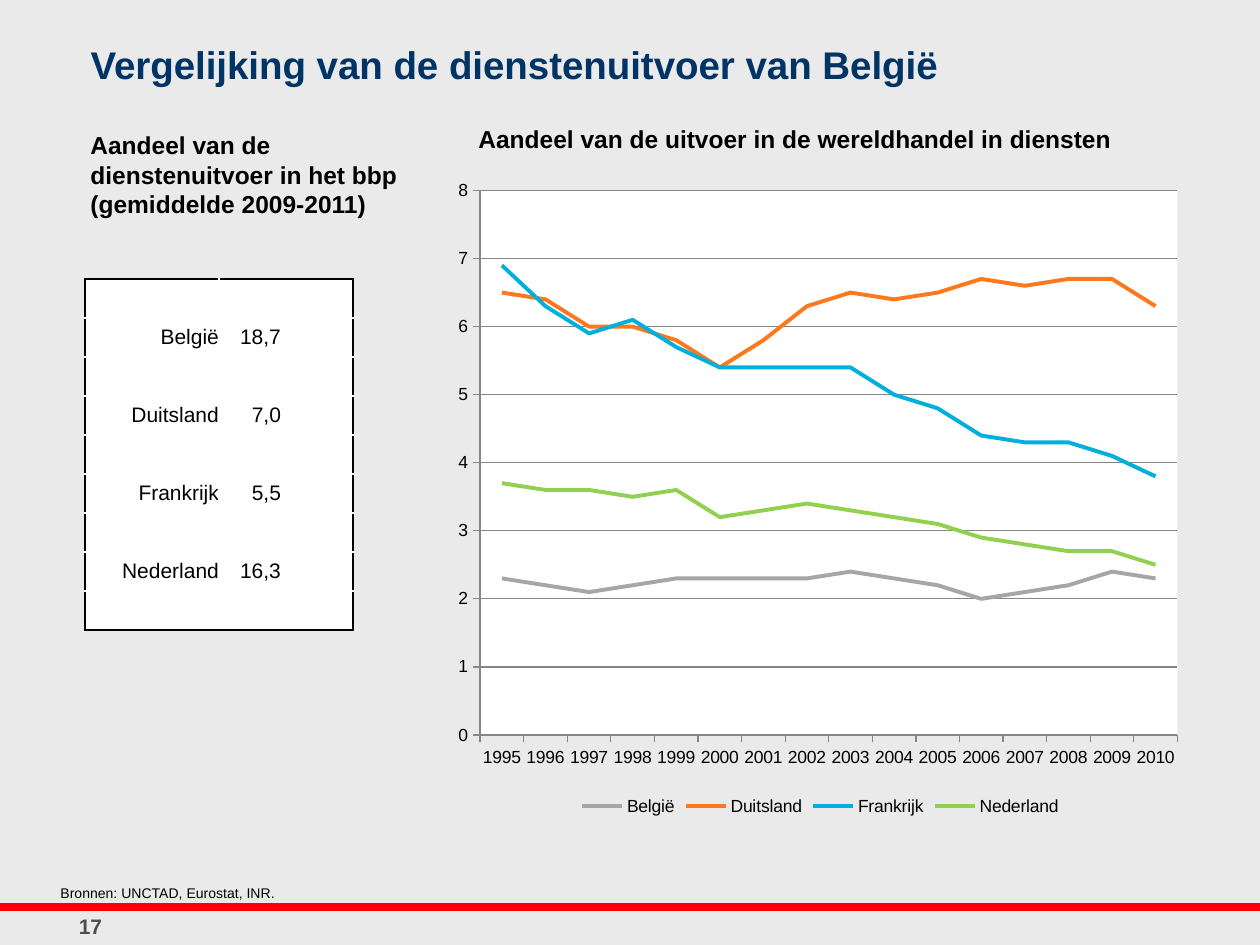
from dataclasses import dataclass

from lxml.etree import SubElement
from pptx import Presentation
from pptx.chart.data import CategoryChartData
from pptx.dml.color import RGBColor
from pptx.enum.chart import XL_CHART_TYPE as ChartType
from pptx.enum.chart import XL_LEGEND_POSITION as LegendPosition
from pptx.enum.chart import XL_TICK_MARK as TickMark
from pptx.enum.shapes import MSO_CONNECTOR as Connector
from pptx.enum.text import MSO_ANCHOR as Anchor
from pptx.enum.text import PP_ALIGN as Align
from pptx.oxml import parse_xml
from pptx.oxml.ns import nsdecls, qn
from pptx.util import Emu, Pt

FONT = "Arial"
COLORS = {
    "background": "EAEAEA", "title": "003366", "text": "000000",
    "number": "4D4D4D", "rule": "FF0000", "white": "FFFFFF", "grid": "868686",
    "België": "A6A6A6", "Duitsland": "FF781D",
    "Frankrijk": "00B0DC", "Nederland": "92D050",
}


@dataclass
class Box:
    left: int
    top: int
    width: int
    height: int

    def emu(self) -> tuple:
        return px(self.left), px(self.top), px(self.width), px(self.height)


@dataclass
class Label:
    text: str
    box: Box
    size: int
    bold: bool = True
    color: str = "text"
    align: Align = Align.LEFT
    anchor: Anchor = Anchor.TOP


@dataclass
class Country:
    name: str
    gdp_share: str
    trade_shares: tuple


LABELS = [
    Label("17", Box(35, 908, 111, 37), 12, color="number",
          align=Align.CENTER, anchor=Anchor.MIDDLE),
    Label("Bronnen: UNCTAD, Eurostat, INR.", Box(48, 878, 990, 29), 8, bold=False),
    Label("Aandeel van de uitvoer in de wereldhandel in diensten",
          Box(466, 118, 692, 43), 14),
    Label("Aandeel van de dienstenuitvoer in het bbp (gemiddelde 2009-2011)",
          Box(78, 124, 333, 102), 14),
]
COUNTRIES = [
    Country("België", "18,7", (2.3, 2.2, 2.1, 2.2, 2.3, 2.3, 2.3, 2.3,
                               2.4, 2.3, 2.2, 2, 2.1, 2.2, 2.4, 2.3)),
    Country("Duitsland", "7,0", (6.5, 6.4, 6, 6, 5.8, 5.4, 5.8, 6.3,
                                 6.5, 6.4, 6.5, 6.7, 6.6, 6.7, 6.7, 6.3)),
    Country("Frankrijk", "5,5", (6.9, 6.3, 5.9, 6.1, 5.7, 5.4, 5.4, 5.4,
                                 5.4, 5, 4.8, 4.4, 4.3, 4.3, 4.1, 3.8)),
    Country("Nederland", "16,3", (3.7, 3.6, 3.6, 3.5, 3.6, 3.2, 3.3, 3.4,
                                  3.3, 3.2, 3.1, 2.9, 2.8, 2.7, 2.7, 2.5)),
]


def px(value: int) -> Emu:
    return Emu(round(value * 914400 / 126))


def rgb(name: str) -> RGBColor:
    return RGBColor.from_string(COLORS[name])


def add_run(paragraph, text: str, size: int, bold: bool = False, color: str = "text") -> None:
    run = paragraph.add_run()
    run.text = text
    run.font.name, run.font.size, run.font.bold = FONT, Pt(size), bold
    run.font.color.rgb = rgb(color)


def write_label(shape, label: Label) -> None:
    shape.left, shape.top, shape.width, shape.height = label.box.emu()
    frame = shape.text_frame
    frame.word_wrap, frame.vertical_anchor = True, label.anchor
    paragraph = frame.paragraphs[0]
    paragraph.alignment = label.align
    add_run(paragraph, label.text, label.size, label.bold, label.color)


def add_rule(slide) -> None:
    rule = slide.shapes.add_connector(Connector.STRAIGHT, 0, px(907), px(1260), px(907))
    rule.line.color.rgb, rule.line.width = rgb("rule"), Pt(4.5)
    SubElement(rule._element.spPr, qn("a:effectLst"))


def add_border(cell, sides: str) -> None:
    """Draw the sides, given in the order L, R, T, B, before the cell's fill."""
    for index, side in enumerate(sides):
        cell._tc.get_or_add_tcPr().insert(index, parse_xml(
            f'<a:ln{side} {nsdecls("a")} w="12700"><a:solidFill>'
            f'<a:srgbClr val="{COLORS["text"]}"/></a:solidFill></a:ln{side}>'))


def add_share_table(slide, box: Box) -> None:
    row_count = 2 * len(COUNTRIES) + 1
    table = slide.shapes.add_table(row_count, 2, *box.emu()).table
    table.first_row = table.horz_banding = False
    for row in range(row_count):
        table.rows[row].height = px(box.height // row_count)
        edge = {0: "T", row_count - 1: "B"}.get(row, "")
        for column, side in enumerate("LR"):
            cell = table.cell(row, column)
            cell.margin_left = cell.margin_right = cell.margin_top = cell.margin_bottom = 0
            cell.vertical_anchor = Anchor.MIDDLE
            cell.fill.solid()
            cell.fill.fore_color.rgb = rgb("white")
            add_border(cell, side + edge)
    # Countries fill every second row
    for index, country in enumerate(COUNTRIES):
        name, share = (table.cell(2 * index + 1, column).text_frame.paragraphs[0]
                       for column in range(2))
        name.alignment = Align.RIGHT
        add_run(name, country.name, 12)
        tabs = SubElement(share._p.get_or_add_pPr(), qn("a:tabLst"))
        SubElement(tabs, qn("a:tab"), pos=str(px(62)), algn="dec")
        add_run(share, "\t" + country.gdp_share, 12)


def format_plot_area(chart) -> None:
    plot_area = chart._chartSpace.chart.plotArea
    for layout in plot_area.findall(qn("c:layout")):
        plot_area.remove(layout)
    sizes = {"x": 0.048, "y": 0.024, "w": 0.926, "h": 0.843}
    modes = "".join(f'<c:{key}Mode val="edge"/>' for key in "xy")
    values = "".join(f'<c:{key} val="{value}"/>' for key, value in sizes.items())
    plot_area.insert(0, parse_xml(
        f'<c:layout {nsdecls("c")}><c:manualLayout><c:layoutTarget val="inner"/>'
        f'{modes}{values}</c:manualLayout></c:layout>'))
    plot_area.append(parse_xml(
        f'<c:spPr {nsdecls("c", "a")}><a:solidFill>'
        f'<a:srgbClr val="{COLORS["white"]}"/></a:solidFill></c:spPr>'))


def add_trade_chart(slide, box: Box) -> None:
    data = CategoryChartData(number_format="0.0")
    data.categories = [str(year) for year in range(1995, 2011)]
    for country in COUNTRIES:
        data.add_series(country.name, country.trade_shares)
    chart = slide.shapes.add_chart(ChartType.LINE, *box.emu(), data).chart
    chart.has_title = False
    chart.font.name, chart.font.size = FONT, Pt(10)
    chart.font.color.rgb = rgb("text")
    chart.has_legend = True
    chart.legend.position = LegendPosition.BOTTOM
    chart.legend.include_in_layout = False
    chart.plots[0].vary_by_categories = False
    for series in chart.plots[0].series:
        series.smooth = False
        series.format.line.color.rgb = rgb(series.name)
        series.format.line.width = Pt(2.25)
    # Axes and grid
    value_axis = chart.value_axis
    value_axis.minimum_scale, value_axis.maximum_scale, value_axis.major_unit = 0, 8, 1
    value_axis.tick_labels.number_format = "0"
    value_axis.tick_labels.number_format_is_linked = False
    for axis in (value_axis, chart.category_axis):
        axis.major_tick_mark = TickMark.OUTSIDE
    for part in (value_axis, chart.category_axis, value_axis.major_gridlines):
        part.format.line.color.rgb, part.format.line.width = rgb("grid"), Pt(0.75)
    format_plot_area(chart)


def main() -> None:
    presentation = Presentation()
    presentation.slide_width, presentation.slide_height = px(1260), px(945)
    slide = presentation.slides.add_slide(presentation.slide_layouts[5])
    slide.background.fill.solid()
    slide.background.fill.fore_color.rgb = rgb("background")
    # Title and rule
    add_rule(slide)
    title = slide.shapes.title
    write_label(title, Label("Vergelijking van de dienstenuitvoer van België",
                             Box(78, 30, 1154, 52), 22, color="title"))
    title.text_frame.margin_top = px(11)
    # Data and labels
    add_trade_chart(slide, Box(444, 175, 753, 646))
    add_share_table(slide, Box(85, 279, 268, 351))
    for label in LABELS:
        write_label(slide.shapes.add_textbox(*label.box.emu()), label)
    presentation.save("out.pptx")


if __name__ == "__main__":
    main()
